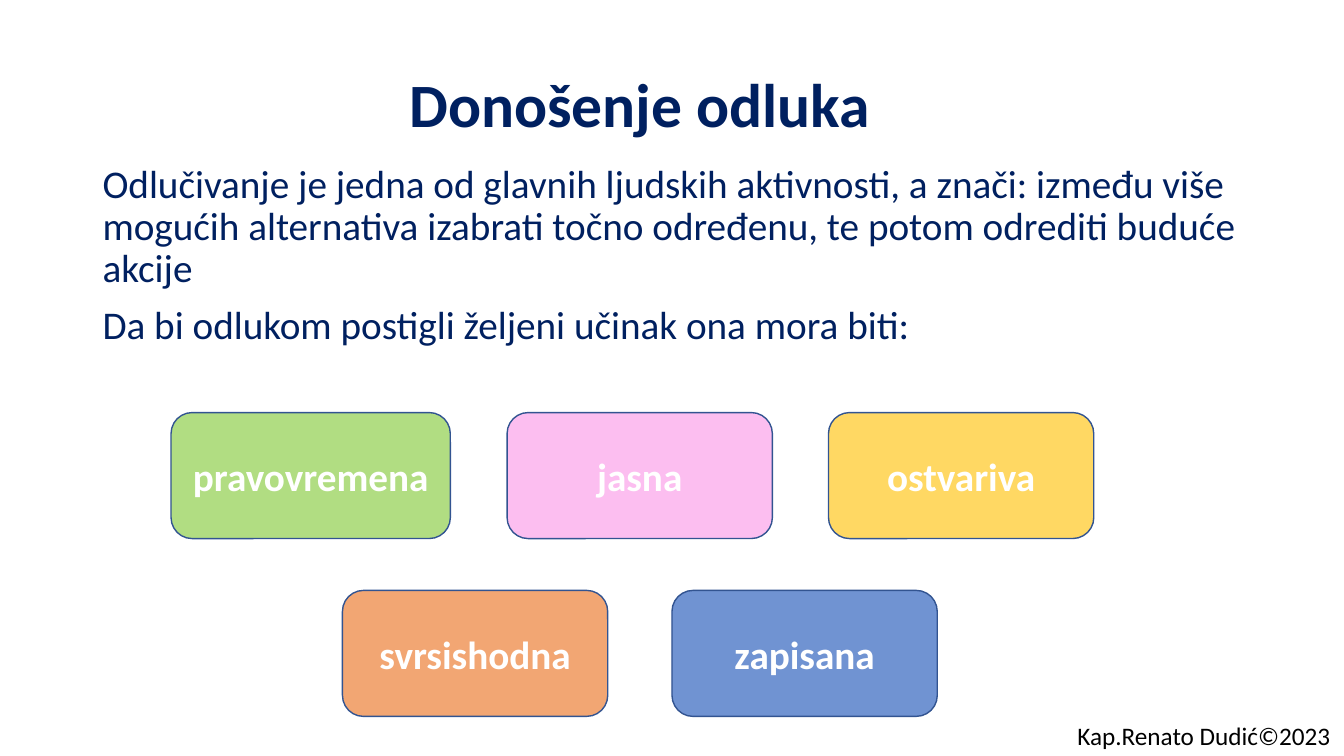
import pptx
import pptx.util
import pptx.dml.color
import pptx.enum.shapes
import pptx.enum.text
import pptx.oxml
import pptx.oxml.ns

Pt = pptx.util.Pt
ALIGN = pptx.enum.text.PP_ALIGN
ANCHOR = pptx.enum.text.MSO_ANCHOR

COLOURS = {
    "navy": "002060", "black": "000000", "white": "FFFFFF", "outline": "325491",
    "green": "92D050", "pink": "FB9DE9", "yellow": "FFC000",
    "orange": "ED7D31", "blue": "4472C4",
}


def rgb(name):
    return pptx.dml.color.RGBColor.from_string(COLOURS[name])


def apply(target, values):
    for name, value in values.items():
        setattr(target, name, value)


class DecisionSlide:
    font_name = "Calibri"

    def __init__(self, deck):
        self.slide = deck.slides.add_slide(deck.slide_layouts[5])

    def fill_text(self, frame, lines, size, colour, bold=False, **paragraph_format):
        """Put each line in its own paragraph of the frame, all in one style."""
        for index, line in enumerate(lines):
            paragraph = frame.add_paragraph() if index else frame.paragraphs[0]
            apply(paragraph, paragraph_format)
            run = paragraph.add_run()
            run.text = line
            apply(run.font, {"name": self.font_name, "size": Pt(size), "bold": bold})
            run.font.color.rgb = rgb(colour)

    def title(self, text, left, top, width, height):
        heading = self.slide.shapes.title
        apply(heading, {"left": Pt(left), "top": Pt(top),
                        "width": Pt(width), "height": Pt(height)})
        apply(heading.text_frame, {"vertical_anchor": ANCHOR.MIDDLE, "word_wrap": True})
        self.fill_text(heading.text_frame, [text], 44, "navy", bold=True,
                       alignment=ALIGN.CENTER, line_spacing=0.9)

    def text(self, lines, left, top, width, height, size, colour, wrap=True, **paragraph_format):
        frame = self.slide.shapes.add_textbox(
            Pt(left), Pt(top), Pt(width), Pt(height)).text_frame
        frame.word_wrap = wrap
        self.fill_text(frame, lines, size, colour, **paragraph_format)

    def quality(self, text, left, top, width, height, colour, opacity):
        """Add a rounded box with a see-through fill; opacity is in percent."""
        box = self.slide.shapes.add_shape(
            pptx.enum.shapes.MSO_SHAPE.ROUNDED_RECTANGLE,
            Pt(left), Pt(top), Pt(width), Pt(height))
        box.shadow.inherit = False
        box.fill.solid()
        box.fill.fore_color.rgb = rgb(colour)
        fill_colour = box.element.spPr.find(".//" + pptx.oxml.ns.qn("a:srgbClr"))
        alpha = pptx.oxml.parse_xml(
            f'<a:alpha {pptx.oxml.ns.nsdecls("a")} val="{opacity * 1000}"/>')
        fill_colour.append(alpha)
        box.line.color.rgb = rgb("outline")
        box.line.width = Pt(1)
        apply(box.text_frame, {"vertical_anchor": ANCHOR.MIDDLE, "word_wrap": True})
        self.fill_text(box.text_frame, [text], 28, "white", bold=True, alignment=ALIGN.CENTER)


def main():
    deck = pptx.Presentation()
    apply(deck, {"slide_width": Pt(960), "slide_height": Pt(540)})
    decisions = DecisionSlide(deck)

    decisions.title("Donošenje odluka", 43.2, 24.5, 828, 104.4)
    decisions.text(
        ["Odlučivanje je jedna od glavnih ljudskih aktivnosti, a znači: između više "
         "mogućih alternativa izabrati točno određenu, te potom odrediti buduće akcije",
         "Da bi odlukom postigli željeni učinak ona mora biti:"],
        66.2, 113.8, 828, 180.7, 28, "navy", line_spacing=0.9, space_before=Pt(10))

    upper_row, lower_row = 294.7, 421.7
    box_width, box_height = 189.5, 90
    qualities = [
        ("pravovremena", 122.2, upper_row, 199.5, "green", 71),
        ("jasna", 362.2, upper_row, box_width, "pink", 66),
        ("ostvariva", 591.8, upper_row, box_width, "yellow", 61),
        ("svrsishodna", 244.6, lower_row, box_width, "orange", 68),
        ("zapisana", 480, lower_row, box_width, "blue", 76),
    ]
    for text, left, top, width, colour, opacity in qualities:
        decisions.quality(text, left, top, width, box_height, colour, opacity)

    decisions.text(["Kap.Renato Dudić©2023"], 762.5, 511, 197.5, 29, 18, "black", wrap=False)
    deck.save("out.pptx")


if __name__ == "__main__":
    main()
